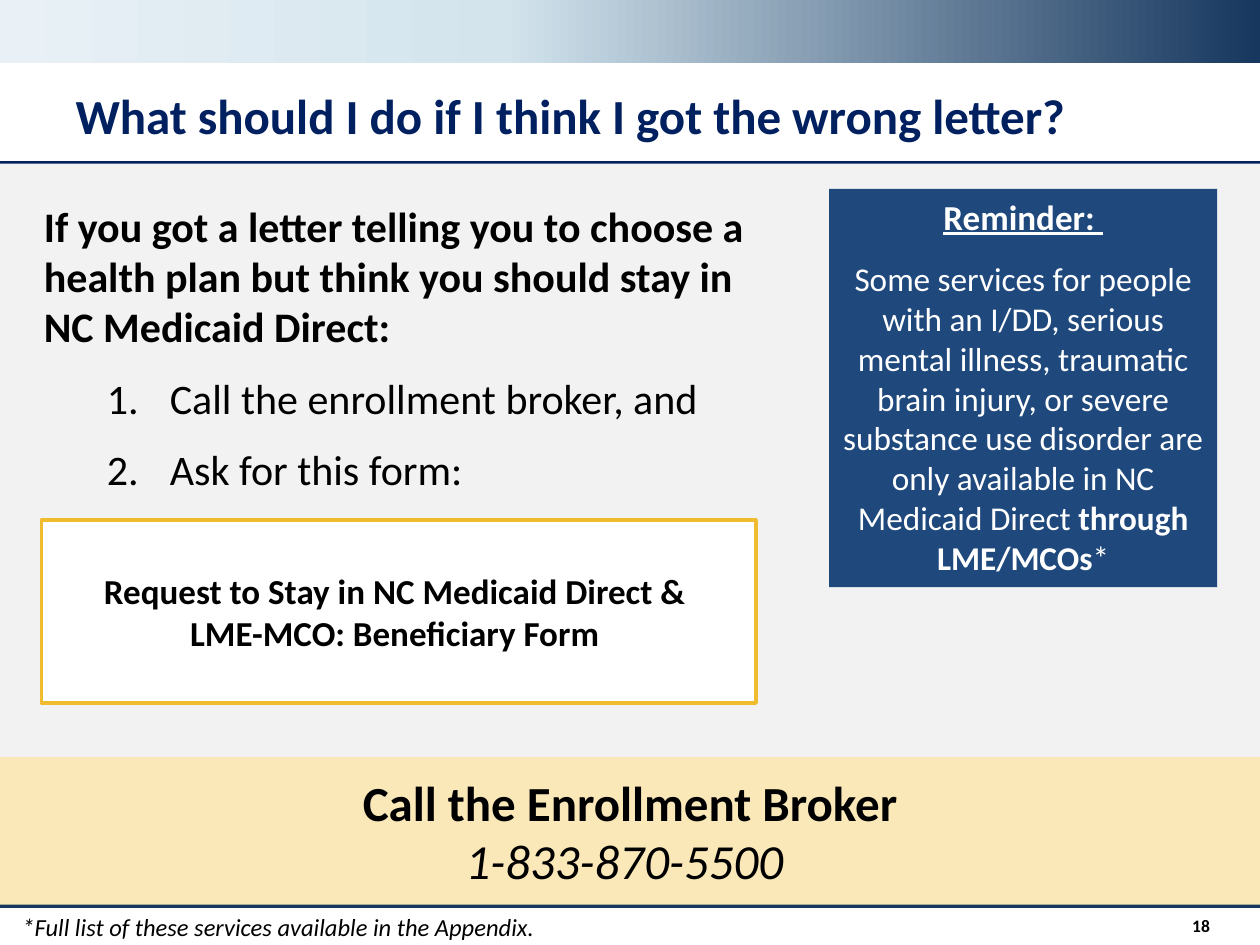
from copy import deepcopy

from pptx import Presentation
from pptx.dml.color import RGBColor
from pptx.enum.shapes import MSO_CONNECTOR, MSO_SHAPE
from pptx.enum.text import MSO_ANCHOR, PP_ALIGN
from pptx.oxml.ns import qn
from pptx.util import Inches, Pt

WIDTH, HEIGHT = Inches(10), Inches(7.5)
FONT = "Calibri"
BLACK = RGBColor(0x00, 0x00, 0x00)
WHITE = RGBColor(0xFF, 0xFF, 0xFF)
NAVY = RGBColor(0x00, 0x20, 0x60)
DARK_BLUE = RGBColor(0x17, 0x37, 0x5E)
BLUE = RGBColor(0x1F, 0x49, 0x7D)
SKY = RGBColor(0xD3, 0xE4, 0xED)
PALE_SKY = RGBColor(0xE9, 0xF1, 0xF6)
GRAY = RGBColor(0xF2, 0xF2, 0xF2)
CREAM = RGBColor(0xFA, 0xE8, 0xB8)
GOLD = RGBColor(0xEF, 0xBB, 0x2F)


def area(left, top, width, height):
    """Turn percentages of the slide's size into lengths."""
    return (int(WIDTH * left / 100), int(HEIGHT * top / 100),
            int(WIDTH * width / 100), int(HEIGHT * height / 100))


def add_rect(s, box, fill=None, line=None):
    sp = s.shapes.add_shape(MSO_SHAPE.RECTANGLE, *area(*box))
    sp.shadow.inherit = False
    if fill is not None:
        sp.fill.solid()
        sp.fill.fore_color.rgb = fill
    if line is None:
        sp.line.fill.background()
    else:
        sp.line.color.rgb = line
        sp.line.width = Pt(2.25)
    return sp


def add_gradient_bar(s, box, stops):
    sp = add_rect(s, box)
    sp.fill.gradient()
    sp.fill.gradient_angle = 180
    first = sp.element.spPr.find(".//" + qn("a:gs"))
    for _ in stops[2:]:
        first.addnext(deepcopy(first))
    for stop, (position, color) in zip(sp.fill.gradient_stops, stops):
        stop.position = position
        stop.color.rgb = color


def add_rule(s, top, color, weight):
    x, y, length, _ = area(0, top, 100, 0)
    rule = s.shapes.add_connector(MSO_CONNECTOR.STRAIGHT, x, y, x + length, y)
    rule.line.color.rgb = color
    rule.line.width = Pt(weight)
    rule.element.spPr.append(rule.element.makeelement(qn("a:effectLst"), {}))


def number_paragraph(p):
    pPr = p._p.get_or_add_pPr()
    pPr.set("marL", str(Inches(1)))
    pPr.set("indent", str(-Inches(0.5)))
    pPr.append(pPr.makeelement(qn("a:buAutoNum"), {"type": "arabicPeriod"}))
    p.level = 1


def add_run(p, text, size=20, color=BLACK, bold=False, italic=False, underline=False):
    r = p.add_run()
    r.text = text
    font = r.font
    font.name, font.size = FONT, Pt(size)
    font.bold, font.italic, font.underline = bold, italic, underline
    font.color.rgb = color


def write(sp, paragraphs, align=PP_ALIGN.LEFT, anchor=MSO_ANCHOR.TOP, after=0,
          wrap=True, numbered=(), **base):
    """Fill a shape; each paragraph is a list of (text, format changes)."""
    tf = sp.text_frame
    tf.word_wrap = wrap
    tf.vertical_anchor = anchor
    for i, runs in enumerate(paragraphs):
        p = tf.add_paragraph() if i else tf.paragraphs[0]
        if i in numbered:
            number_paragraph(p)
        p.alignment = align
        p.space_after = Pt(after)
        for text, changes in runs:
            add_run(p, text, **{**base, **changes})


def add_text(s, box, paragraphs, **fmt):
    write(s.shapes.add_textbox(*area(*box)), paragraphs, **fmt)


def add_title(s, box, text):
    title = s.shapes.title
    title.left, title.top, title.width, title.height = area(*box)
    write(title, [[(text, {})]], size=28, color=NAVY, bold=True)
    title.text_frame.paragraphs[0].line_spacing = 0.9


def main():
    prs = Presentation()
    prs.slide_width, prs.slide_height = WIDTH, HEIGHT
    s = prs.slides.add_slide(prs.slide_layouts[5])
    centred = {"align": PP_ALIGN.CENTER, "anchor": MSO_ANCHOR.MIDDLE}

    add_gradient_bar(s, (0, 0, 100, 6.67),
                     [(0, DARK_BLUE), (0.6, SKY), (1, PALE_SKY)])
    add_rule(s, 17.2, NAVY, 2)
    add_rule(s, 95.87, DARK_BLUE, 2.25)
    add_rect(s, (0, 17.33, 100, 78.13), GRAY)
    add_title(s, (5, 9.07, 90, 8), "What should I do if I think I got the wrong letter?")

    add_text(s, (2.5, 20.53, 60, 32.8), [
        [("If you got a letter telling you to choose a health plan but think "
          "you should stay in NC Medicaid Direct:", {"bold": True})],
        [("Call the enrollment broker, and", {})],
        [("Ask for this form:", {})],
    ], size=24, after=12, numbered=(1, 2))

    broker = add_rect(s, (0, 80.13, 100, 15.6), CREAM)
    write(broker, [
        [("Call the Enrollment Broker", {"bold": True})],
        [("1-833-870-5500 ", {"italic": True})],
    ], size=28, **centred)

    reminder = add_rect(s, (65.8, 20, 30.8, 42.13), BLUE)
    write(reminder, [
        [("Reminder: ", {"size": 20, "bold": True, "underline": True})],
        [("Some services for people with an I/DD, serious mental illness, "
          "traumatic brain injury, or severe substance use disorder are only "
          "available in NC Medicaid Direct ", {}),
         ("through LME/MCOs", {"bold": True}), ("*", {})],
    ], size=19, color=WHITE, align=PP_ALIGN.CENTER, after=12)

    form = add_rect(s, (3.3, 55.07, 56.7, 19.33), WHITE, line=GOLD)
    write(form, [
        [("Request to Stay in NC Medicaid Direct & ", {})],
        [("LME-MCO: Beneficiary Form ", {})],
    ], size=20, bold=True, **centred)

    add_text(s, (0.8, 95.87, 43, 4.5),
             [[("*Full list of these services available in the Appendix.", {})]],
             size=14, italic=True, wrap=False)
    add_text(s, (90.8, 95.87, 6.2, 4.13), [[("18", {})]], size=10, bold=True,
             align=PP_ALIGN.RIGHT, anchor=MSO_ANCHOR.MIDDLE)
    prs.save("out.pptx")


if __name__ == "__main__":
    main()
